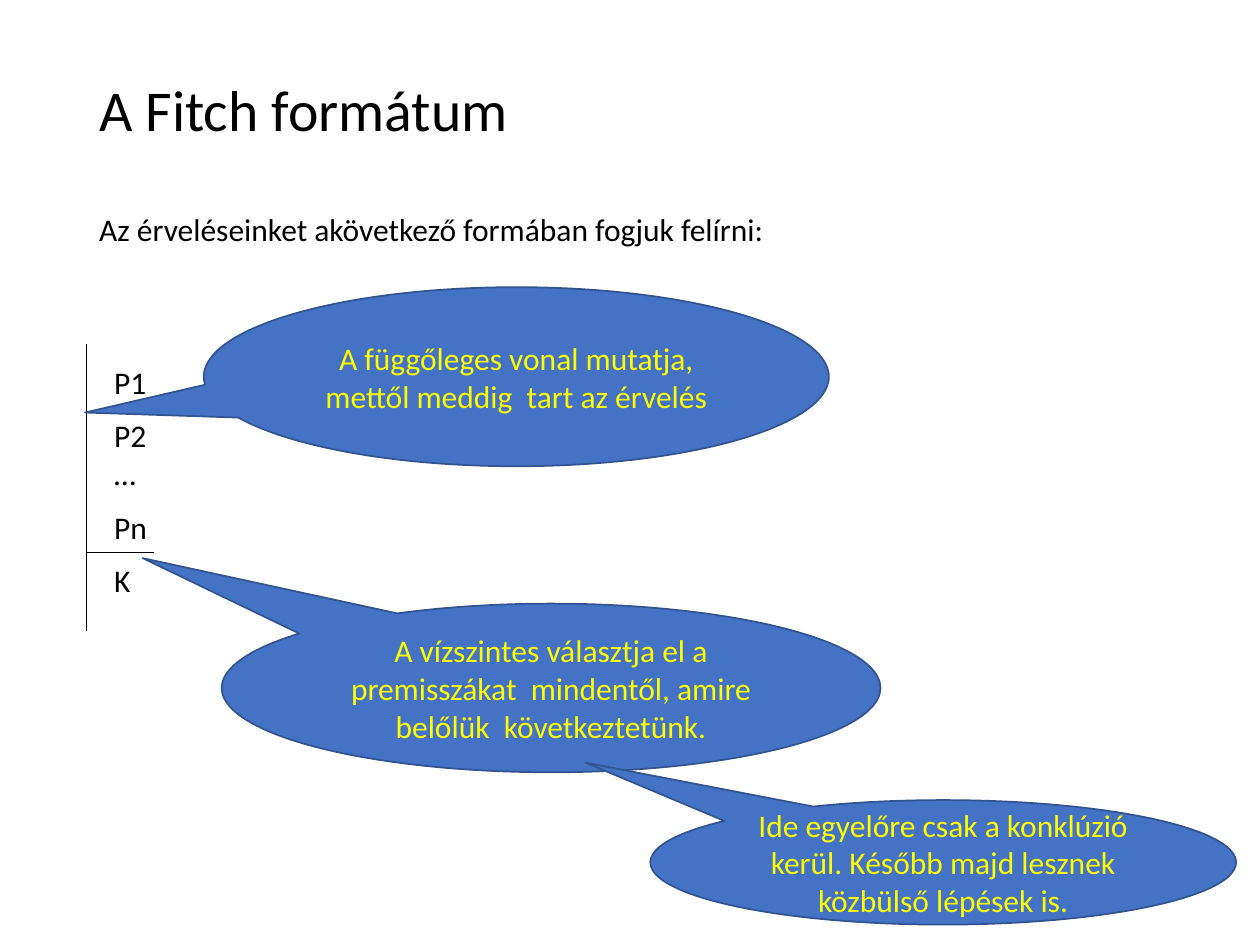
"""Builds the slide that introduces the Fitch format for arguments."""
from lxml import etree
from pptx import Presentation
from pptx import util as u
from pptx.dml.color import RGBColor
from pptx.enum import shapes, text
from pptx.oxml import ns

BLACK = RGBColor(0x00, 0x00, 0x00)
BLUE = RGBColor(0x44, 0x72, 0xC4)
DARK_BLUE = RGBColor(0x32, 0x54, 0x91)
YELLOW = RGBColor(0xFF, 0xFF, 0x00)


def add_run(paragraph, words, size=18, colour=BLACK):
    run = paragraph.add_run()
    run.text = words
    run.font.name = "Calibri"
    run.font.size = u.Pt(size)
    run.font.color.rgb = colour


def add_frame(left, top, width, height):
    frame = slide.shapes.add_textbox(u.Cm(left), u.Cm(top), u.Cm(width), u.Cm(height)).text_frame
    frame.word_wrap = True
    return frame


deck = Presentation()
deck.slide_width, deck.slide_height = u.Cm(25.4), u.Cm(19.05)
slide = deck.slides.add_slide(deck.slide_layouts[6])

title = add_frame(1.75, 1.02, 21.9, 2.51)
title.vertical_anchor = text.MSO_ANCHOR.MIDDLE
title.paragraphs[0].line_spacing = 0.9
add_run(title.paragraphs[0], "A Fitch formátum", 33)

for x1, y1, x2, y2 in [(1.75, 6.93, 1.75, 12.73), (1.75, 11.13, 3.1, 11.13)]:
    rule = slide.shapes.add_connector(
        shapes.MSO_CONNECTOR.STRAIGHT, u.Cm(x1), u.Cm(y1), u.Cm(x2), u.Cm(y2))
    rule.line.color.rgb = BLACK
    rule.line.width = u.Pt(0.5)
    etree.SubElement(rule._element.spPr, ns.qn("a:effectLst"))

steps = add_frame(1.9, 7.19, 3.45, 5.26)
steps.margin_left = u.Cm(0.4)
for number, lines in enumerate([["P1"], ["P2", "…"], ["Pn"], ["K"]]):
    step = steps.add_paragraph() if number else steps.paragraphs[0]
    step.space_before = u.Pt(9 if number else 0)
    add_run(step, lines[0])
    for line in lines[1:]:
        step.add_line_break()
        add_run(step, line)

intro = add_frame(1.75, 4.11, 20.35, 1.02)
add_run(intro.paragraphs[0], "Az érveléseinket akövetkező formában fogjuk felírni:")

remarks = [
    (4.11, 5.79, 12.6, 3.61, -0.69, 0.2,
     "A függőleges vonal mutatja, mettől meddig  tart az érvelés"),
    (4.47, 12.17, 13.28, 3.4, -0.62, -0.77,
     "A vízszintes választja el a premisszákat  mindentől, amire belőlük  következtetünk."),
    (13.11, 16.13, 11.81, 2.51, -0.61, -0.8,
     "Ide egyelőre csak a konklúzió kerül. Később majd lesznek közbülső lépések is."),
]
for left, top, width, height, tip_x, tip_y, words in remarks:
    remark = slide.shapes.add_shape(
        shapes.MSO_SHAPE.OVAL_CALLOUT, u.Cm(left), u.Cm(top), u.Cm(width), u.Cm(height))
    remark.adjustments[0], remark.adjustments[1] = tip_x, tip_y
    remark.shadow.inherit = False
    remark.fill.solid()
    remark.fill.fore_color.rgb = BLUE
    remark.line.color.rgb = DARK_BLUE
    remark.line.width = u.Pt(1)
    remark.text_frame.word_wrap = True
    remark.text_frame.vertical_anchor = text.MSO_ANCHOR.MIDDLE
    remark.text_frame.paragraphs[0].alignment = text.PP_ALIGN.CENTER
    add_run(remark.text_frame.paragraphs[0], words, colour=YELLOW)

deck.save("out.pptx")
